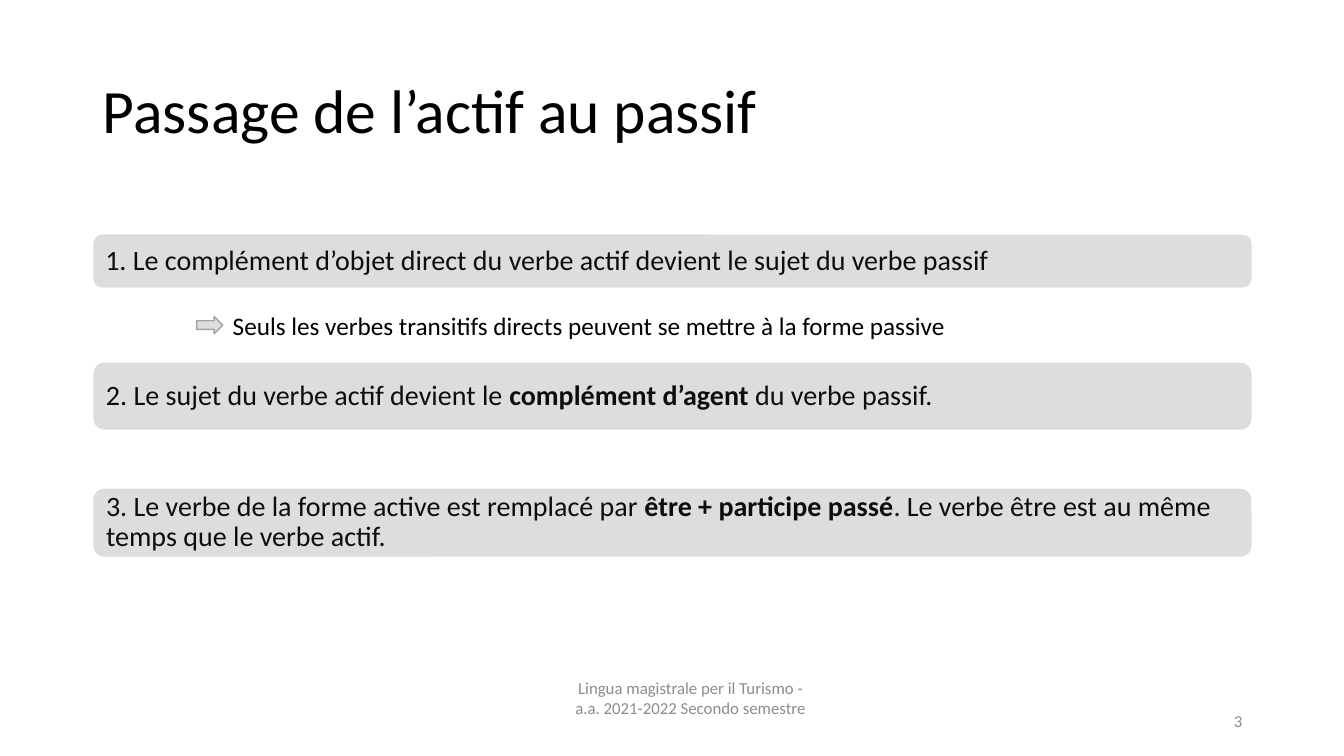
from pptx import Presentation
from pptx.dml.color import RGBColor
from pptx.enum.shapes import MSO_SHAPE
from pptx.enum.text import MSO_ANCHOR, MSO_AUTO_SIZE, PP_ALIGN
from pptx.util import Inches, Pt

COLORS = {"black": "000000", "ink": "0D0D0D", "muted": "8C8C8C",
          "panel": "DDDDDD", "white": "FFFFFF", "arrow_edge": "A3A3A3"}
FONT = "Calibri"
LEFT, WIDTH = 0.92, 11.5

RULES = [
    (2.32, 0.54, ["1. Le complément d’objet direct du verbe actif devient "
                  "le sujet du verbe passif"]),
    (3.59, 0.68, ["2. Le sujet du verbe actif devient le ",
                  "complément d’agent ", "du verbe passif."]),
    (4.84, 0.69, ["3. Le verbe de la forme active est remplacé par ",
                  "être + participe passé",
                  ". Le verbe être est au même temps que le verbe actif."]),
]


def color(name):
    return RGBColor.from_string(COLORS[name])


def write(frame, *parts, size, ink="black", align=PP_ALIGN.LEFT,
          anchor=MSO_ANCHOR.MIDDLE, spacing=1.0):
    """Fill the frame with one paragraph; every second part is bold."""
    frame.word_wrap = True
    frame.auto_size = MSO_AUTO_SIZE.NONE
    frame.vertical_anchor = anchor
    paragraph = frame.paragraphs[0]
    paragraph.alignment = align
    paragraph.line_spacing = spacing
    for index, part in enumerate(parts):
        run = paragraph.add_run()
        run.text = part
        run.font.name = FONT
        run.font.size = Pt(size)
        run.font.bold = index % 2 == 1
        run.font.color.rgb = color(ink)


class SlideBuilder:
    def __init__(self, slide):
        self.slide = slide

    def title(self, text, left, top, width, height):
        title = self.slide.shapes.title
        title.left, title.top = Inches(left), Inches(top)
        title.width, title.height = Inches(width), Inches(height)
        write(title.text_frame, text, size=44, spacing=0.9)

    def shape(self, kind, left, top, width, height, edge):
        shape = self.slide.shapes.add_shape(
            kind, Inches(left), Inches(top), Inches(width), Inches(height))
        shape.shadow.inherit = False
        shape.fill.solid()
        shape.fill.fore_color.rgb = color("panel")
        shape.line.color.rgb = color(edge)
        shape.line.width = Pt(1)
        return shape

    def rule(self, top, height, parts):
        panel = self.shape(MSO_SHAPE.ROUNDED_RECTANGLE, LEFT, top, WIDTH, height, "white")
        frame = panel.text_frame
        frame.margin_top = frame.margin_bottom = Inches(0.05)
        write(frame, *parts, size=20, ink="ink", spacing=0.9)

    def text(self, text, left, top, width, height, **style):
        box = self.slide.shapes.add_textbox(
            Inches(left), Inches(top), Inches(width), Inches(height))
        write(box.text_frame, text, **style)


def main():
    deck = Presentation()
    deck.slide_width, deck.slide_height = Inches(13.33), Inches(7.5)
    title_only = deck.slide_layouts[5]
    page = SlideBuilder(deck.slides.add_slide(title_only))

    page.title("Passage de l’actif au passif", LEFT, 0.4, WIDTH, 1.45)
    for top, height, parts in RULES:
        page.rule(top, height, parts)
    page.text("Lingua magistrale per il Turismo - a.a. 2021-2022 Secondo semestre",
              5.56, 6.65, 2.58, 0.55, size=12, ink="muted", align=PP_ALIGN.CENTER)
    page.text("3", 9.42, 6.95, 3, 0.4, size=12, ink="muted", align=PP_ALIGN.RIGHT)
    page.text("Seuls les verbes transitifs directs peuvent se mettre à la forme passive",
              2.21, 3.03, 7.59, 0.4, size=18, anchor=MSO_ANCHOR.TOP)
    page.shape(MSO_SHAPE.RIGHT_ARROW, 1.95, 3.14, 0.26, 0.17, "arrow_edge")

    deck.save("out.pptx")


if __name__ == "__main__":
    main()
